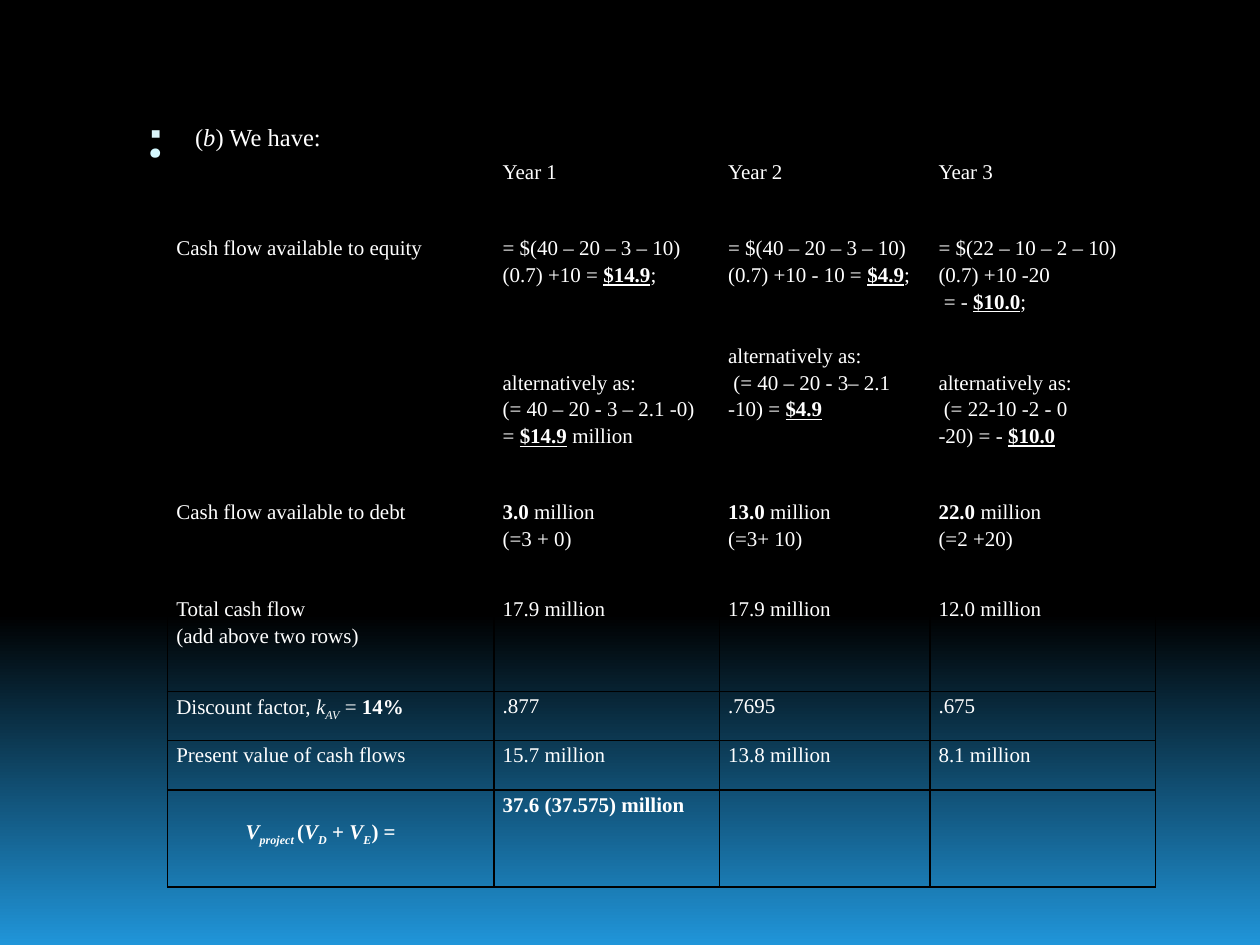
from lxml.etree import SubElement
from pptx import Presentation
from pptx.dml.color import RGBColor
from pptx.oxml.ns import qn
from pptx.util import Inches, Pt

LINE = 15.4


def rgb(value):
    return RGBColor.from_string(value)


def add_run(p, text, size=12, font="Times New Roman", color="FFFFFF", style="", spacing=0):
    r = p.add_run()
    r.text = text
    r.font.size = Pt(size)
    r.font.name = font
    r.font.color.rgb = rgb(color)
    r.font.bold = "b" in style
    r.font.italic = "i" in style
    r.font.underline = "u" in style
    rPr = r.font._element
    if "s" in style:
        rPr.set("baseline", "-25000")
    if spacing:
        rPr.set("spc", str(spacing * 100))


def add_runs(p, runs, **fmt):
    for item in [runs] if isinstance(runs, str) else runs:
        text, style = (item, "") if isinstance(item, str) else item
        add_run(p, text, style=style, **fmt)


class SlideBuilder:
    margin = 0.07
    border = "000000"

    def __init__(self, prs):
        self.s = prs.slides.add_slide(prs.slide_layouts[6])

    def background(self, top, bottom):
        fill = self.s.background.fill
        fill.gradient()
        fill.gradient_angle = 270
        for stop, color, position in zip(fill.gradient_stops, (top, bottom), (0.65, 1)):
            stop.color.rgb = rgb(color)
            stop.position = position

    def text(self, x, y, w, h, runs, bullet=None, line_spacing=1, **fmt):
        tf = self.s.shapes.add_textbox(Inches(x), Inches(y), Inches(w), Inches(h)).text_frame
        tf.word_wrap = True
        p = tf.paragraphs[0]
        p.line_spacing = line_spacing
        pPr = p._p.get_or_add_pPr()
        pPr.set("marL", str(Inches(0.45)))
        pPr.set("indent", str(Inches(-0.38)))
        if bullet:
            clr = SubElement(pPr, qn("a:buClr"))
            SubElement(clr, qn("a:srgbClr"), val="DBF5F9")
            SubElement(pPr, qn("a:buSzPct"), val="95000")
            SubElement(pPr, qn("a:buChar"), char=bullet)
        add_runs(p, runs, **fmt)

    def cell(self, cell, paragraphs, top=0, indent=0):
        cell.fill.background()
        cell.margin_left = cell.margin_right = Inches(self.margin)
        cell.margin_top, cell.margin_bottom = Pt(top), 0
        tcPr = cell._tc.get_or_add_tcPr()
        for i, side in enumerate(("lnL", "lnR", "lnT", "lnB")):
            ln = tcPr.makeelement(qn(f"a:{side}"), {"w": str(Pt(1))})
            SubElement(SubElement(ln, qn("a:solidFill")), qn("a:srgbClr"), val=self.border)
            tcPr.insert(i, ln)
        tf = cell.text_frame
        for i, (runs, gap) in enumerate(paragraphs):
            p = tf.add_paragraph() if i else tf.paragraphs[0]
            p.line_spacing = 1.15
            p.space_before = Pt(gap * LINE)
            if indent:
                p._p.get_or_add_pPr().set("marL", str(Inches(indent)))
            add_runs(p, runs)

    def table(self, x, y, widths, heights, rows, tops, indents):
        table = self.s.shapes.add_table(
            len(rows), len(widths), Inches(x), Inches(y),
            Inches(sum(widths)), Inches(sum(heights))).table
        table.first_row = table.horz_banding = False
        for col, width in zip(table.columns, widths):
            col.width = Inches(width)
        for i, row in enumerate(rows):
            table.rows[i].height = Inches(heights[i])
            for j, content in enumerate(row):
                paragraphs = [(content, 0)] if isinstance(content, str) else content
                self.cell(table.cell(i, j), paragraphs,
                          tops.get((i, j), 0), indents.get((i, j), 0))


def debt(amount, working):
    return [([(amount, "b"), " million"], 0), (working, 0)]


ROWS = [
    ["", "Year 1", "Year 2", "Year 3"],
    [
        "Cash flow available to equity",
        [(["= $(40 – 20 – 3 – 10)(0.7) +10 = ", ("$14.9", "bu"), ";"], 0),
         ("alternatively as:", 3),
         (["(= 40 – 20 - 3 – 2.1 -0) = ", ("$14.9", "bu"), " million"], 0)],
        [(["= $(40 – 20 – 3 – 10)(0.7) +10 - 10 = ", ("$4.9", "bu"), ";"], 0),
         ("alternatively as:", 2),
         ([" (= 40 – 20 - 3– 2.1 -10) = ", ("$4.9", "bu")], 0)],
        [("= $(22 – 10 – 2 – 10)(0.7) +10 -20", 0),
         ([" = - ", ("$10.0", "bu"), ";"], 0),
         ("alternatively as:", 2),
         (" (= 22-10 -2 - 0", 0),
         (["-20) = - ", ("$10.0", "bu")], 0)],
    ],
    ["Cash flow available to debt", debt("3.0", "(=3 + 0)"),
     debt("13.0", "(=3+ 10)"), debt("22.0", "(=2 +20)")],
    [[("Total cash flow", 0), ("(add above two rows)", 0)],
     "17.9 million", "17.9 million", "12.0 million"],
    [[(["Discount factor, ", ("k", "i"), ("AV", "is"), " = ", ("14%", "b")], 0)],
     ".877", ".7695", ".675"],
    ["Present value of cash flows", "15.7 million", "13.8 million", "8.1 million"],
    [[([("V", "bi"), ("project ", "bis"), ("(", "b"), ("V", "bi"), ("D", "bis"),
        (" + ", "b"), ("V", "bi"), ("E", "bis"), (") =", "b")], 0)],
     [([("37.6 (37.575) million", "b")], 0)], "", ""],
]


def main():
    prs = Presentation()
    prs.slide_width, prs.slide_height = Inches(10), Inches(7.5)
    slide = SlideBuilder(prs)
    slide.background("000000", "2095D9")
    slide.text(1, 0.33, 8.5, 0.08, ".", line_spacing=1.5,
               size=40, font="Vollkorn", color="D5F9FF", spacing=-1)
    slide.text(1, 0.92, 8.5, 6.42, ["(", ("b", "i"), ") We have:"], bullet="▪", size=14)
    tops = {(1, j): LINE for j in range(4)} | {(6, 0): LINE}
    slide.table(1.33, 1.25, [2.59, 1.79, 1.67, 1.79],
                [0.39, 2.31, 0.77, 0.77, 0.39, 0.39, 0.77], ROWS, tops, {(6, 0): 0.55})
    prs.save("out.pptx")


if __name__ == "__main__":
    main()
